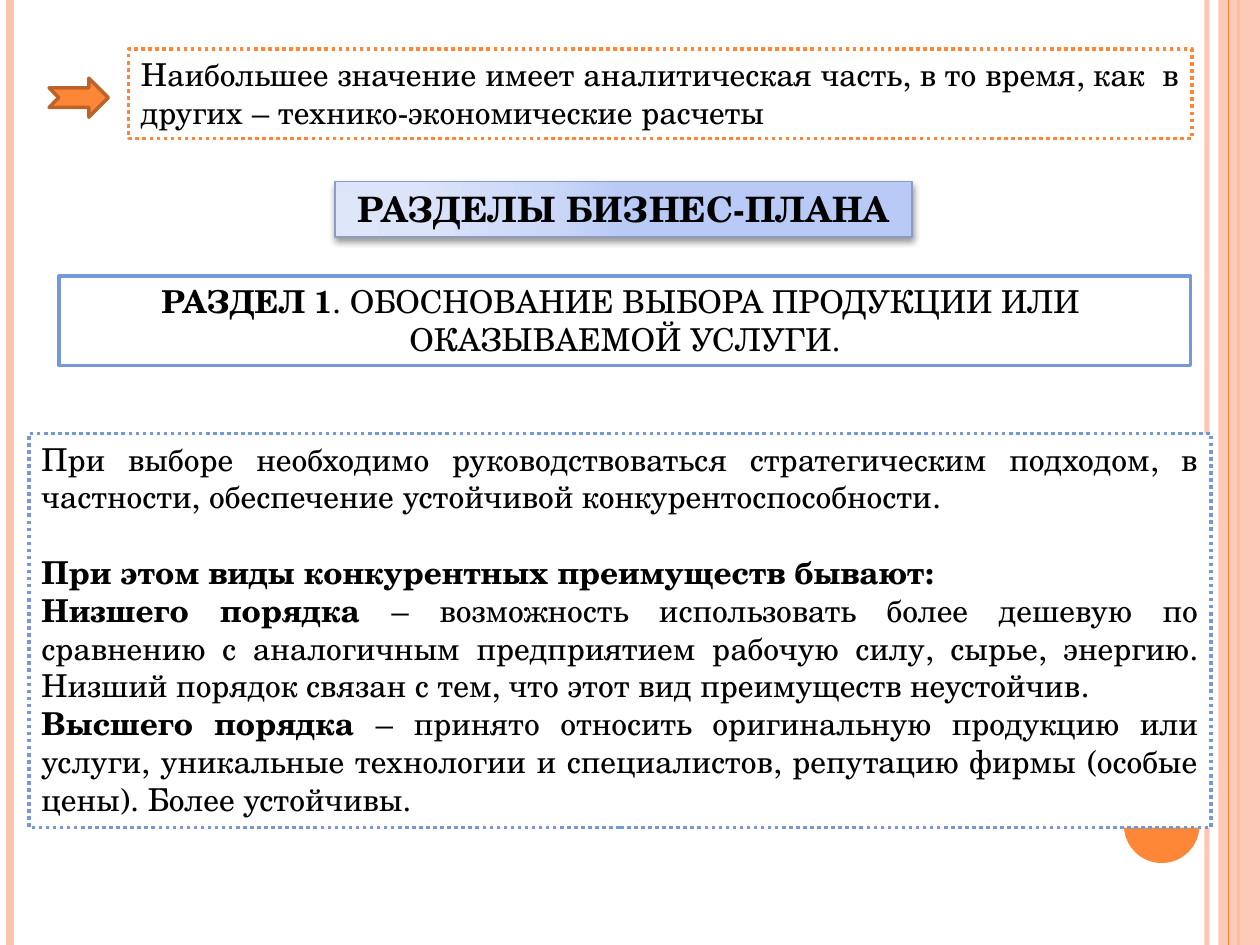
import lxml.etree
import pptx
import pptx.dml.color
import pptx.enum.dml
import pptx.enum.shapes
import pptx.enum.text
import pptx.oxml.ns
import pptx.util

COLS, ROWS = 100, 75
HUES = {"white": "FFFFFF", "black": "000000", "pink": "FEC3AE",
        "orange": "FE8637", "rust": "BC6329", "blue": "7598D9", "slate": "8D9CBF"}
FONT = "TeX Gyre Schola"
KIND = pptx.enum.shapes.MSO_SHAPE
ALIGN = pptx.enum.text.PP_ALIGN
DOTS = pptx.enum.dml.MSO_LINE.ROUND_DOT


def hue(name):
    return pptx.dml.color.RGBColor.from_string(HUES[name])


def node(parent, tag, **attrs):
    """Add a drawing element with the given attributes."""
    name = pptx.oxml.ns.qn("a:" + tag)
    return lxml.etree.SubElement(parent, name, {k: str(v) for k, v in attrs.items()})


def fade(shape, share):
    """Make the first colour of a shape partly opaque, in percent."""
    tint = next(shape.element.spPr.iter(pptx.oxml.ns.qn("a:srgbClr")))
    node(tint, "alpha", val=share * 1000)


class Page:
    def __init__(self, deck):
        self.wide, self.high = deck.slide_width, deck.slide_height
        self.shapes = deck.slides.add_slide(deck.slide_layouts[6]).shapes

    def x(self, cols):
        return round(self.wide * cols / COLS)

    def y(self, rows):
        return round(self.high * rows / ROWS)

    def rule(self, col, width, color, share=100):
        """Draw an upright line over the full height."""
        line = self.shapes.add_connector(
            pptx.enum.shapes.MSO_CONNECTOR.STRAIGHT, self.x(col), 0, self.x(col), self.high)
        line.line.color.rgb = hue(color)
        line.line.width = pptx.util.Pt(width)
        node(line.element.spPr, "effectLst")
        if share < 100:
            fade(line, share)

    def form(self, kind, at, fill, edge=None, width=2, dash=None):
        left, top, wide, high = at
        shape = self.shapes.add_shape(
            kind, self.x(left), self.y(top), self.x(wide), self.y(high))
        shape.shadow.inherit = False
        shape.fill.solid()
        shape.fill.fore_color.rgb = hue(fill)
        if edge:
            shape.line.color.rgb = hue(edge)
            shape.line.width = pptx.util.Pt(width)
            if dash:
                shape.line.dash_style = dash
        else:
            shape.line.fill.background()
        return shape

    def text(self, shape, paras, align, size=18, wrap=True):
        """Fill a shape; each paragraph is (space before, bold part, plain part)."""
        frame = shape.text_frame
        look = {"word_wrap": wrap, "vertical_anchor": pptx.enum.text.MSO_ANCHOR.TOP,
                "auto_size": pptx.enum.text.MSO_AUTO_SIZE.SHAPE_TO_FIT_TEXT}
        for key, val in look.items():
            setattr(frame, key, val)
        for i, (gap, *parts) in enumerate(paras):
            para = frame.add_paragraph() if i else frame.paragraphs[0]
            para.alignment = align
            para.space_before = pptx.util.Pt(gap)
            for bold, words in zip((True, False), parts):
                if not words:
                    continue
                run = para.add_run()
                run.text = words
                face = {"name": FONT, "size": pptx.util.Pt(size), "bold": bold}
                for key, val in face.items():
                    setattr(run.font, key, val)
                run.font.color.rgb = hue("black")

    def glow(self, shape, stops):
        """Give a shape a round gradient and a soft shadow below."""
        shape.fill.gradient()
        grad = shape.element.spPr.find(pptx.oxml.ns.qn("a:gradFill"))
        for child in list(grad):
            grad.remove(child)
        marks = node(grad, "gsLst")
        for pos, tint in stops:
            node(node(marks, "gs", pos=pos * 1000), "srgbClr", val=tint)
        node(node(grad, "path", path="circle"), "fillToRect",
             l=5000, t=100000, r=120000, b=10000)
        effects = shape.element.spPr.find(pptx.oxml.ns.qn("a:effectLst"))
        cast = node(effects, "outerShdw", blurRad=pptx.util.Pt(4), dist=pptx.util.Pt(2),
                    dir=90 * 60000, rotWithShape=0)
        node(node(cast, "srgbClr", val=HUES["black"]), "alpha", val=40000)


def main():
    deck = pptx.Presentation()
    deck.slide_width, deck.slide_height = pptx.util.Inches(10), pptx.util.Inches(7.5)
    page = Page(deck)

    page.rule(95.8, 3, "pink", 93)
    page.rule(0.8, 4.5, "pink")
    page.rule(98.3, 1.5, "orange")
    fade(page.form(KIND.RECTANGLE, (96.7, 0, 3.3, ROWS), "pink"), 87)
    page.rule(97.5, 0.75, "orange")
    page.form(KIND.OVAL, (89.2, 62.5, 6, 6), "orange")

    note = page.form(KIND.RECTANGLE, (10.2, 3.9, 84.4, 7.1), "white", "orange", dash=DOTS)
    page.text(note, [(0, "", "Наибольшее значение имеет аналитическая часть, в то время, "
                             "как  в других – технико-экономические расчеты")], ALIGN.JUSTIFY)
    page.form(KIND.NOTCHED_RIGHT_ARROW, (3.9, 6.2, 4.7, 3.1), "orange", "rust")

    title = page.form(KIND.RECTANGLE, (26.6, 14.4, 45.8, 4.4), "white", "slate", 1)
    page.glow(title, [(0, "DEE6FA"), (30, "DBE4F9"), (75, "CAD7F7"), (100, "B8CAF5")])
    page.text(title, [(0, " РАЗДЕЛЫ БИЗНЕС-ПЛАНА")], ALIGN.LEFT, 20, False)

    part = page.form(KIND.RECTANGLE, (4.7, 21.9, 89.8, 7.1), "white", "blue")
    page.text(part, [(0, "РАЗДЕЛ 1", ". ОБОСНОВАНИЕ ВЫБОРА ПРОДУКЦИИ ИЛИ "),
                     (0, "", "ОКАЗЫВАЕМОЙ УСЛУГИ.")], ALIGN.CENTER)

    body = page.form(KIND.RECTANGLE, (2.3, 34.4, 93.8, 31.3), "white", "blue", dash=DOTS)
    page.text(body, [
        (0, "", "При выборе необходимо руководствоваться стратегическим подходом, "
                "в частности, обеспечение устойчивой конкурентоспособности. "),
        (21.6, "При этом виды конкурентных преимуществ бывают:"),
        (0, "Низшего порядка ",
         "– возможность использовать более дешевую по сравнению с аналогичным "
         "предприятием рабочую силу, сырье, энергию. Низший порядок связан с тем, "
         "что этот вид преимуществ неустойчив."),
        (0, "Высшего порядка ",
         "– принято относить оригинальную продукцию или услуги, уникальные технологии "
         "и специалистов, репутацию фирмы (особые цены). Более устойчивы."),
    ], ALIGN.JUSTIFY)
    deck.save("out.pptx")


if __name__ == "__main__":
    main()
